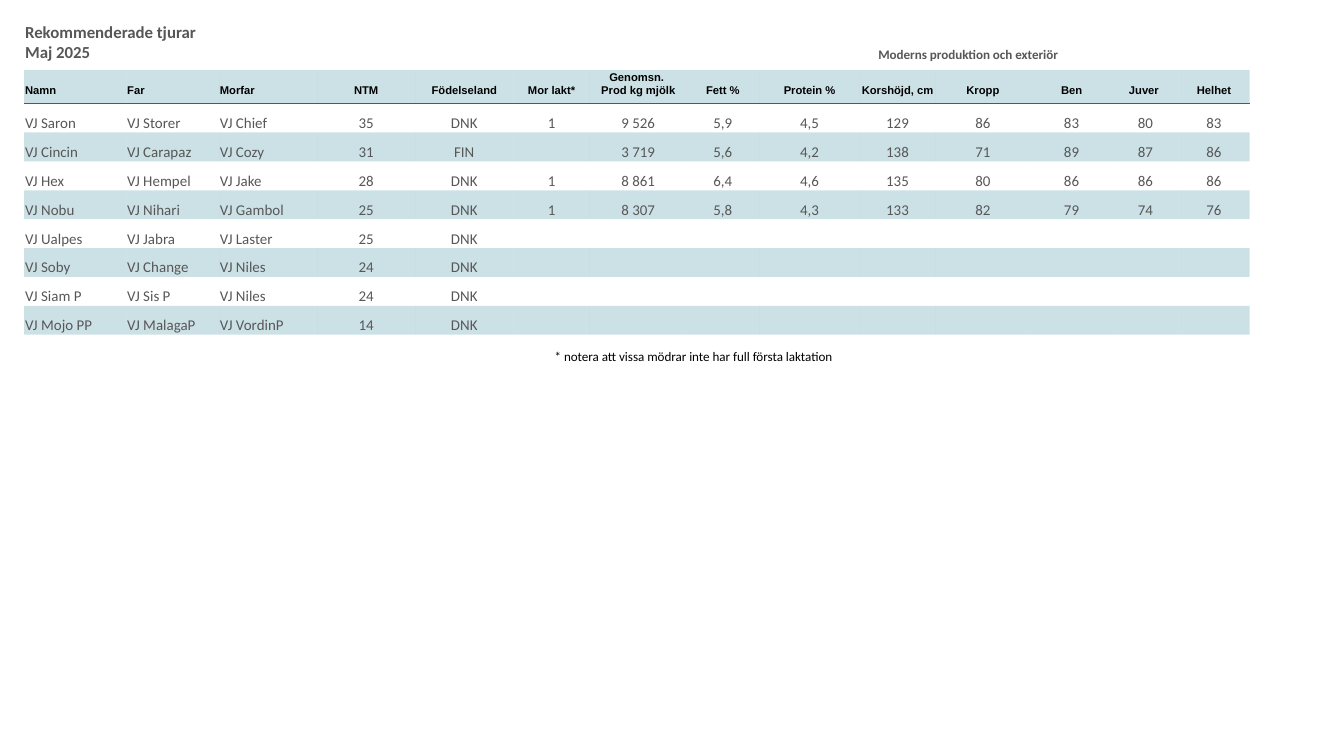
import pptx
import pptx.util
import pptx.dml.color
import pptx.enum.text
import pptx.oxml.ns
from lxml import etree

Inches, Pt = pptx.util.Inches, pptx.util.Pt
RGBColor = pptx.dml.color.RGBColor
qn = pptx.oxml.ns.qn
PP_ALIGN = pptx.enum.text.PP_ALIGN

COLORS = {"text": "575757", "black": "000000", "band": "006B85"}
NO_GRID_STYLE = "{2D5ABB26-0587-4C30-8999-92F81FD0307C}"


def add_plain_table(rows, left, top, widths, heights):
    """Add an unstyled table with the given column widths and row heights."""
    frame = slide.shapes.add_table(
        rows, len(widths), Inches(left), Inches(top), Inches(sum(widths)), Inches(sum(heights)))
    table = frame.table
    table.first_row = table.horz_banding = False
    table._tbl.tblPr.find(qn("a:tableStyleId")).text = NO_GRID_STYLE
    for column, width in zip(table.columns, widths):
        column.width = Inches(width)
    for row, height in zip(table.rows, heights):
        row.height = Inches(height)
    return table


def write_cell(cell, text, size, font="Calibri", color="text", bold=False,
               centered=False, bottom=0.05, banded=False, ruled=None):
    """Fill in one cell; ruled names the edge that carries a line, if any."""
    cell.vertical_anchor = pptx.enum.text.MSO_ANCHOR.BOTTOM
    cell.margin_left = cell.margin_right = cell.margin_top = Pt(0.5)
    cell.margin_bottom = Inches(bottom)
    if banded:
        cell.fill.solid()
        cell.fill.fore_color.rgb = RGBColor.from_string(COLORS["band"])
        tint = cell._tc.tcPr.find(".//" + qn("a:srgbClr"))
        etree.SubElement(tint, qn("a:alpha"), val="20000")
    else:
        cell.fill.background()
    for position, edge in enumerate(["lnL", "lnR", "lnT", "lnB"]):
        line = etree.Element(qn("a:" + edge), w=str(Pt(1)))
        if edge == ruled:
            line_fill = etree.SubElement(line, qn("a:solidFill"))
            etree.SubElement(line_fill, qn("a:srgbClr"), val=COLORS["text"])
        else:
            etree.SubElement(line, qn("a:noFill"))
        cell._tc.tcPr.insert(position, line)
    cell.text_frame.text = text
    paragraph = cell.text_frame.paragraphs[0]
    paragraph.alignment = PP_ALIGN.CENTER if centered else PP_ALIGN.LEFT
    for run in paragraph.runs:
        run.font.size = Pt(size)
        run.font.name = font
        run.font.bold = bold
        run.font.color.rgb = RGBColor.from_string(COLORS[color])
    if not text:
        # An empty cell needs a small end mark, or its row grows
        etree.SubElement(paragraph._p, qn("a:endParaRPr"), sz=str(size * 100))


headings = ["Namn", "Far", "Morfar", "NTM", "Födelseland", "Mor lakt*",
            "Genomsn. \vProd kg mjölk", "Fett %", "Protein %", "Korshöjd, cm",
            "Kropp", "Ben", "Juver ", "Helhet"]
bulls = [
    ["VJ Saron", "VJ Storer", "VJ Chief", "35", "DNK", "1", "9 526", "5,9", "4,5", "129", "86", "83", "80", "83"],
    ["VJ Cincin", "VJ Carapaz", "VJ Cozy", "31", "FIN", "", "3 719", "5,6", "4,2", "138", "71", "89", "87", "86"],
    ["VJ Hex", "VJ Hempel", "VJ Jake", "28", "DNK", "1", "8 861", "6,4", "4,6", "135", "80", "86", "86", "86"],
    ["VJ Nobu", "VJ Nihari", "VJ Gambol", "25", "DNK", "1", "8 307", "5,8", "4,3", "133", "82", "79", "74", "76"],
    ["VJ Ualpes", "VJ Jabra", "VJ Laster", "25", "DNK"],
    ["VJ Soby", "VJ Change", "VJ Niles", "24", "DNK"],
    ["VJ Siam P", "VJ Sis P", "VJ Niles", "24", "DNK"],
    ["VJ Mojo PP", "VJ MalagaP", "VJ VordinP", "14", "DNK"],
]
name_columns = 3
column_widths = [0.76, 0.69, 0.73, 0.73, 0.73, 0.57, 0.72, 0.54, 0.75, 0.56, 0.71, 0.61, 0.49, 0.53]
row_heights = [0.36, 0.25] + [1.72 / len(bulls)] * len(bulls)

presentation = pptx.Presentation()
presentation.slide_width = Inches(10)
presentation.slide_height = Inches(10) * 9 // 16
slide = presentation.slides.add_slide(presentation.slide_layouts[6])

bull_table = add_plain_table(len(row_heights), 0.18, 0.16, column_widths, row_heights)

# Caption row
captions = {0: "Rekommenderade tjurar Maj 2025", 7: "Moderns produktion och exteriör"}
for col in range(len(headings)):
    write_cell(bull_table.cell(0, col), captions.get(col, ""), 7 if col else 9,
               bold=True, centered=col > 0)
for first, last in [(0, 1), (5, 6), (7, 13)]:
    bull_table.cell(0, first).merge(bull_table.cell(0, last))

# Heading row, with a rule between it and the first bull
for col, heading in enumerate(headings):
    write_cell(bull_table.cell(1, col), heading, 6, "Arial", "black", bold=True,
               centered=col >= name_columns, banded=True, ruled="lnB")

# One row per bull, every second one tinted
for row, bull in enumerate(bulls):
    values = bull + [""] * (len(headings) - len(bull))
    for col, value in enumerate(values):
        write_cell(bull_table.cell(row + 2, col), value, 8, bottom=0,
                   centered=col >= name_columns, banded=row % 2 == 1,
                   ruled="lnT" if row == 0 else None)

footnote = add_plain_table(1, 4.12, 2.55, [3.58], [0.22])
write_cell(footnote.cell(0, 0), "* notera att vissa mödrar inte har full första laktation",
           7, color="black")

presentation.save("out.pptx")
